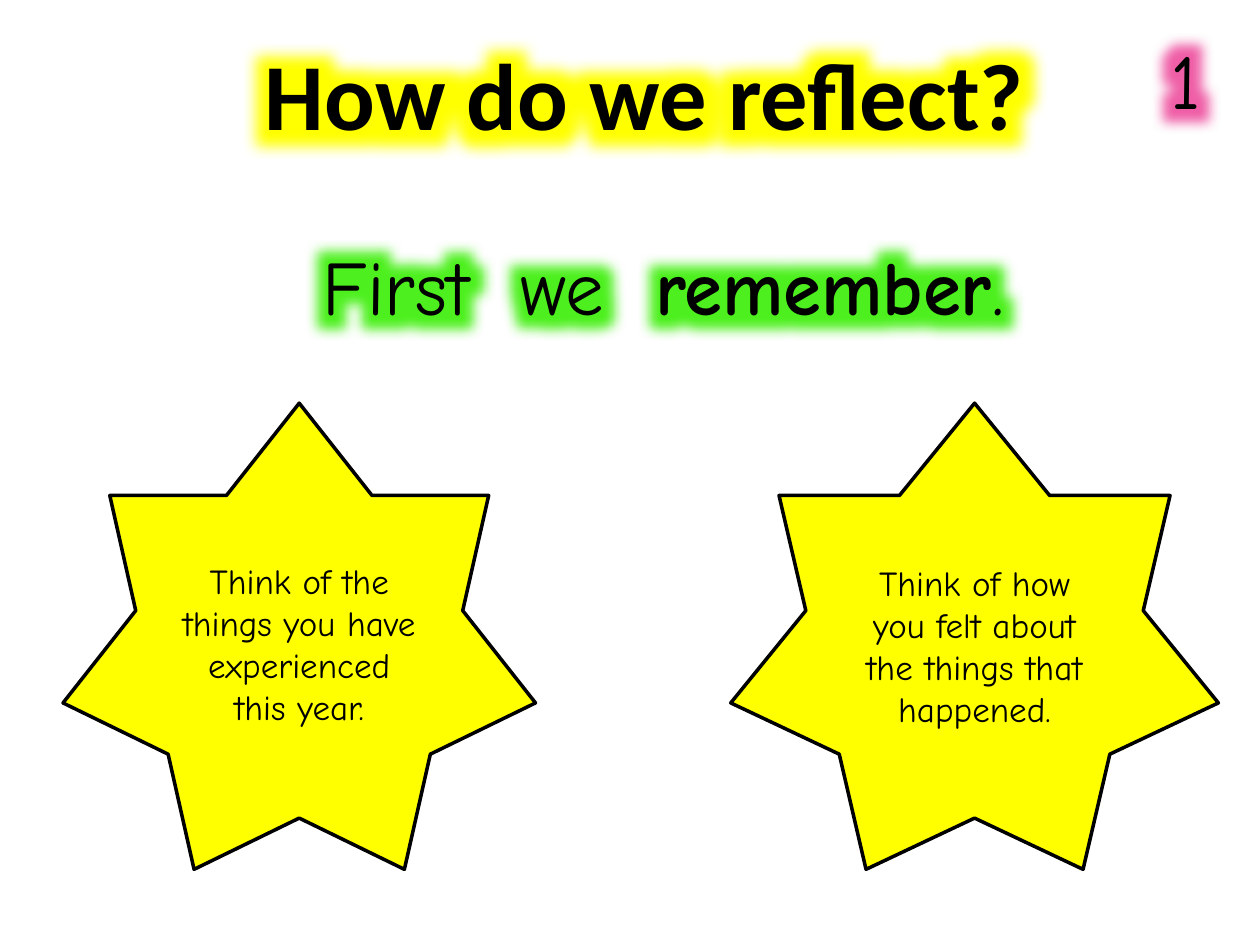
from dataclasses import dataclass

from lxml import etree
from pptx import Presentation
from pptx.dml.color import RGBColor
from pptx.enum.shapes import MSO_SHAPE
from pptx.enum.text import MSO_ANCHOR, PP_ALIGN
from pptx.oxml.ns import qn
from pptx.util import Inches, Pt

STAR = MSO_SHAPE.STAR_7_POINT
MIDDLE = MSO_ANCHOR.MIDDLE
LEFT, CENTER = PP_ALIGN.LEFT, PP_ALIGN.CENTER


@dataclass(frozen=True)
class Theme:
    ink: str = "000000"
    yellow: str = "FFFF00"
    green: str = "4DF01E"
    pink: str = "F060A8"
    head_font: str = "Calibri"
    body_font: str = "Comic Neue"
    title_size: int = 54
    lead_size: int = 44
    star_size: int = 20
    outline: int = 2
    glow: int = 32


@dataclass(frozen=True)
class Box:
    left: float
    top: float
    width: float
    height: float

    def lengths(self) -> tuple:
        return tuple(Inches(v) for v in (self.left, self.top, self.width, self.height))


@dataclass(frozen=True)
class Heading:
    box: Box
    runs: tuple  # (text, bold) pairs
    font: str
    size: int
    glow: str
    align: PP_ALIGN = CENTER


@dataclass(frozen=True)
class Star:
    box: Box
    text: str
    top_inset: float


THEME = Theme()
HEADINGS = (
    Heading(Box(0.51, 0.24, 9.21, 1.01), (("How do we reflect?", True),),
            THEME.head_font, THEME.title_size, THEME.yellow),
    Heading(Box(9.19, 0.21, 0.48, 0.84), (("1", False),),
            THEME.body_font, THEME.lead_size, THEME.pink, LEFT),
    Heading(Box(0.28, 1.84, 9.97, 0.84),
            (("First  we  ", False), ("remember", True), (".", False)),
            THEME.body_font, THEME.lead_size, THEME.green),
)
STARS = (
    Star(Box(0.5, 3.2, 3.75, 3.7),
         "Think of the things you have experienced this year.", 0.35),
    Star(Box(5.8, 3.2, 3.87, 3.7),
         "Think of how you felt about the things that happened.", 0.38),
)


def add_run(p, text: str, font: str, size: int, bold: bool = False):
    r = p.add_run()
    r.text = text
    formats = {"name": font, "size": Pt(size), "bold": bold}
    for name, value in formats.items():
        setattr(r.font, name, value)
    r.font.color.rgb = RGBColor.from_string(THEME.ink)
    return r


def add_glow(r, color: str) -> None:
    """Put a soft halo of the given colour behind a run."""
    effects = etree.Element(qn("a:effectLst"))
    glow = etree.SubElement(effects, qn("a:glow"), rad=str(Pt(THEME.glow)))
    etree.SubElement(glow, qn("a:srgbClr"), val=color)
    r.font.fill._xPr.find(qn("a:solidFill")).addnext(effects)


def draw_heading(slide, heading: Heading) -> None:
    tf = slide.shapes.add_textbox(*heading.box.lengths()).text_frame
    tf.word_wrap = True
    p = tf.paragraphs[0]
    p.alignment = heading.align
    for text, bold in heading.runs:
        add_glow(add_run(p, text, heading.font, heading.size, bold), heading.glow)


def draw_star(slide, star: Star) -> None:
    sp = slide.shapes.add_shape(STAR, *star.box.lengths())
    sp.shadow.inherit = False
    sp.fill.solid()
    sp.fill.fore_color.rgb = RGBColor.from_string(THEME.yellow)
    sp.line.color.rgb = RGBColor.from_string(THEME.ink)
    sp.line.width = Pt(THEME.outline)
    tf = sp.text_frame
    formats = {"word_wrap": True, "vertical_anchor": MIDDLE,
               "margin_top": Inches(star.top_inset)}
    for name, value in formats.items():
        setattr(tf, name, value)
    p = tf.paragraphs[0]
    p.alignment = CENTER
    add_run(p, star.text, THEME.body_font, THEME.star_size)


def main() -> None:
    prs = Presentation()
    prs.slide_width, prs.slide_height = Inches(10), Inches(7.5)
    slide = prs.slides.add_slide(prs.slide_layouts[6])
    for heading in HEADINGS:
        draw_heading(slide, heading)
    for star in STARS:
        draw_star(slide, star)
    prs.save("out.pptx")


if __name__ == "__main__":
    main()
